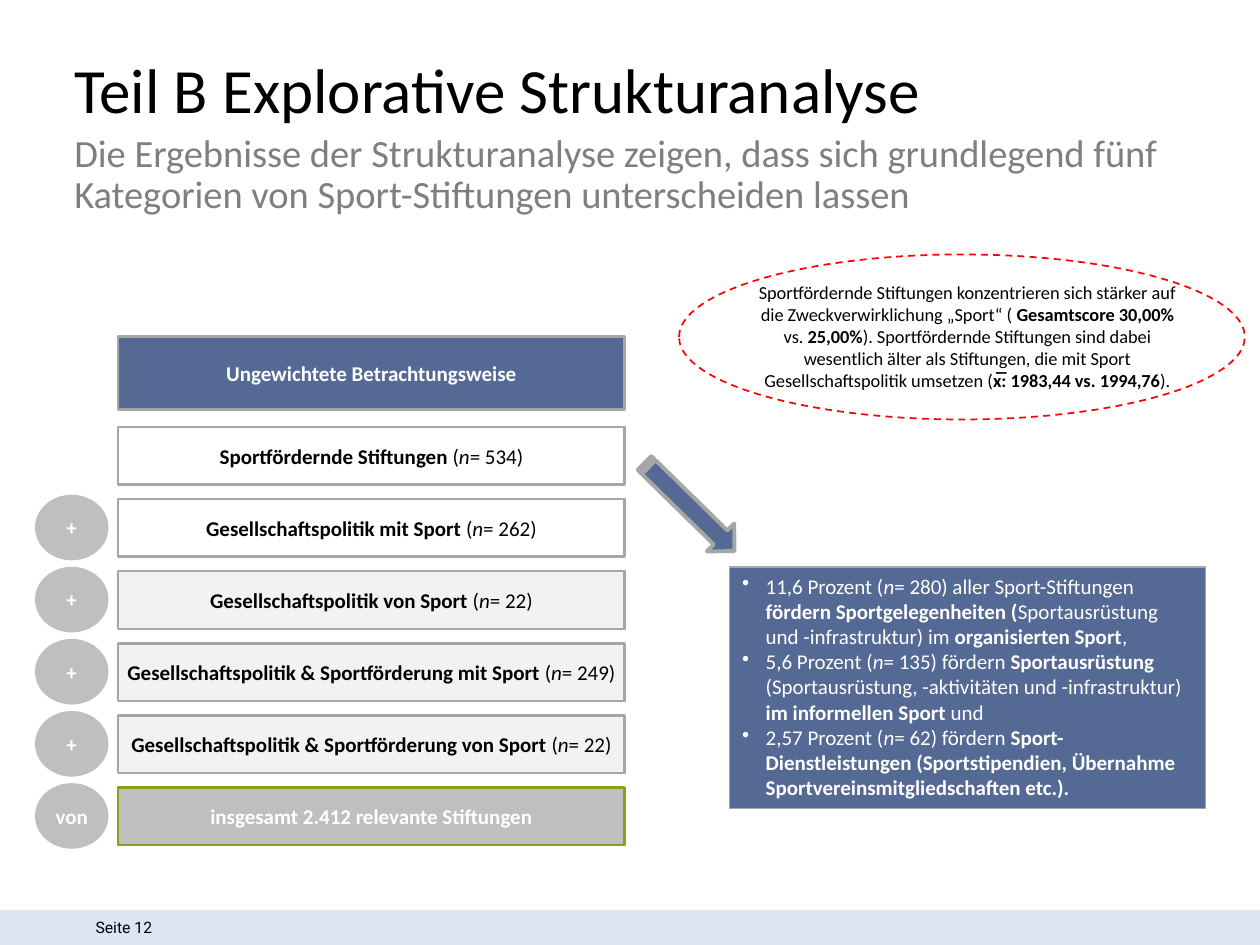
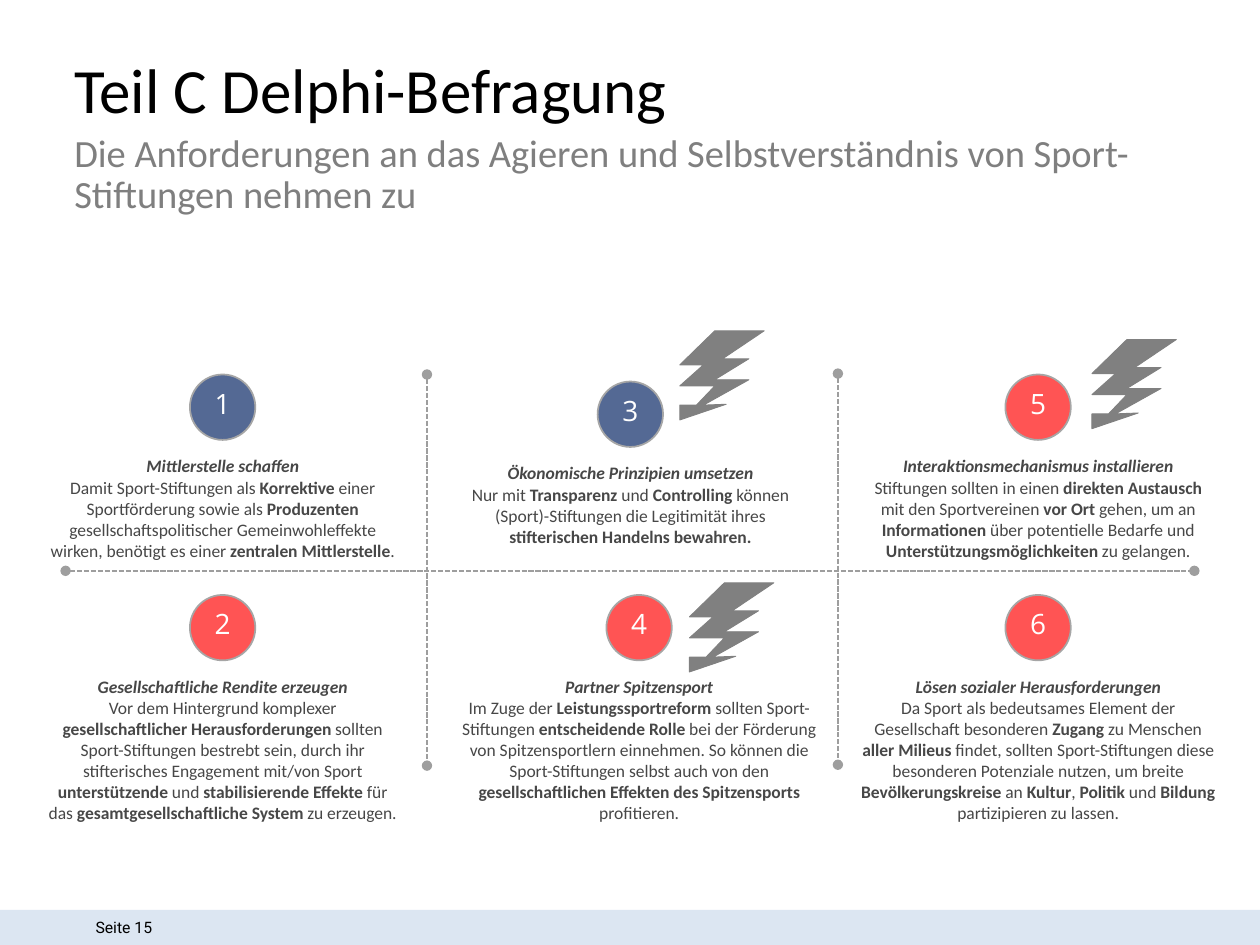
import lxml.etree
import pptx
import pptx.dml.color
import pptx.enum.dml
import pptx.enum.shapes
import pptx.enum.text
import pptx.oxml.ns
import pptx.util

Pt = pptx.util.Pt
qn = pptx.oxml.ns.qn
Shapes = pptx.enum.shapes.MSO_SHAPE
Align = pptx.enum.text.PP_ALIGN
Anchor = pptx.enum.text.MSO_ANCHOR
Dash = pptx.enum.dml.MSO_LINE

NAVY, RED, WHITE, BLACK = "002060", "FF0000", "FFFFFF", "000000"
BORDER, SILVER, PALE, GREEN = "A6A6A6", "BFBFBF", "F2F2F2", "86A315"
SUBTITLE, BODY, DIVIDER, BOLT, BAND = "7F7F7F", "474747", "9E9E9E", "808080", "DCE6F2"
OPACITY = 67
BADGE = 37.4
BOLT_OUTLINE = [(20, 0), (0, 19.5), (13.5, 19.5), (0, 31.5), (20, 31.5), (9.5, 42.5),
                (0, 42.5), (0, 51), (26.5, 42), (13.5, 42.5), (39.5, 28), (20, 28),
                (39.5, 16), (24.5, 16), (48.25, 0)]

ROWS = [
    ("", "*Sportfördernde Stiftungen *(_n_= 534)", None, BORDER, BLACK),
    ("+", "*Gesellschaftspolitik mit Sport *(_n_= 262)", None, BORDER, BLACK),
    ("+", "*Gesellschaftspolitik von Sport *(_n_= 22)", PALE, BORDER, BLACK),
    ("+", "*Gesellschaftspolitik & Sportförderung mit Sport *(_n_= 249)", PALE, BORDER, BLACK),
    ("+", "*Gesellschaftspolitik & Sportförderung von Sport *(_n_= 22)", PALE, BORDER, BLACK),
    ("von", "*insgesamt 2.412 relevante Stiftungen*", SILVER, GREEN, WHITE),
]

CALLOUT = ("Sportfördernde Stiftungen konzentrieren sich stärker auf die Zweckverwirklichung "
           "„Sport“ ( *Gesamtscore 30,00% *vs. *25,00%*). Sportfördernde Stiftungen sind dabei "
           "wesentlich älter als Stiftungen, die mit Sport Gesellschaftspolitik umsetzen "
           "(*x̅: 1983,44 vs. 1994,76*).")

FINDINGS = [
    "11,6 Prozent (_n_= 280) aller Sport-Stiftungen *fördern Sportgelegenheiten (*"
    "Sportausrüstung und -infrastruktur) im *organisierten Sport*,",
    "5,6 Prozent (_n_= 135) fördern *Sportausrüstung *(Sportausrüstung, -aktivitäten und "
    "-infrastruktur) *im informellen Sport *und",
    "2,57 Prozent (_n_= 62) fördern *Sport-Dienstleistungen (Sportstipendien, Übernahme "
    "Sportvereinsmitgliedschaften etc.).*",
]

DEMANDS = [
    (26, 214, "1", NAVY, None, "Mittlerstelle schaffen",
     "Damit Sport-Stiftungen als *Korrektive* einer Sportförderung sowie als *Produzenten *"
     "gesellschaftspolitischer Gemeinwohleffekte wirken, benötigt es einer "
     "*zentralen Mittlerstelle*."),
    (26, 340, "2", RED, None, "Gesellschaftliche Rendite erzeugen",
     "Vor dem Hintergrund komplexer *gesellschaftlicher Herausforderungen *sollten "
     "Sport-Stiftungen bestrebt sein, durch ihr stifterisches Engagement mit/von Sport "
     "*unterstützende* und *stabilisierende Effekte *für das "
     "*gesamtgesellschaftliche System *zu erzeugen."),
    (259, 218, "3", NAVY, (47, -29), "Ökonomische Prinzipien umsetzen",
     "Nur mit *Transparenz *und *Controlling* können (Sport)-Stiftungen die Legitimität ihres "
     "*stifterischen Handelns bewahren.*"),
    (264, 340, "4", RED, (47.5, -7), "Partner Spitzensport",
     "Im Zuge der *Leistungssportreform* sollten Sport-Stiftungen *entscheidende Rolle *bei der "
     "Förderung von Spitzensportlern einnehmen. So können die Sport-Stiftungen selbst auch von "
     "den *gesellschaftlichen Effekten des Spitzensports *profitieren."),
    (492, 214, "5", RED, (49.5, -20), "Interaktionsmechanismus installieren",
     "Stiftungen sollten in einen *direkten Austausch *mit den Sportvereinen *vor Ort *gehen, "
     "um an *Informationen* über potentielle Bedarfe und *Unterstützungsmöglichkeiten* "
     "zu gelangen."),
    (492, 340, "6", RED, None, "Lösen sozialer Herausforderungen",
     "Da Sport als bedeutsames Element der Gesellschaft besonderen *Zugang* zu Menschen "
     "*aller Milieus *findet, sollten Sport-Stiftungen diese besonderen Potenziale nutzen, um "
     "breite *Bevölkerungskreise* an *Kultur*, *Politik* und *Bildung* partizipieren zu lassen."),
]

DIVIDERS = [(244, 214, 244, 437.5), (478.8, 213.5, 478.8, 437), (37.5, 326.2, 682.5, 326.2)]


def colour(code):
    return pptx.dml.color.RGBColor.from_string(code)


def add_spans(para, text, size, font, ink):
    for bold_part, chunk in enumerate(text.split("*")):
        for italic_part, piece in enumerate(chunk.split("_")):
            if piece:
                span = para.add_run()
                span.text = piece
                span.font.name = font
                span.font.size = Pt(size)
                span.font.bold = bold_part % 2 == 1
                span.font.italic = italic_part % 2 == 1
                span.font.color.rgb = colour(ink)


def write(shape, *texts, size=12, font="Calibri", ink=BLACK, align=Align.LEFT,
          anchor=Anchor.TOP, margins=(0, 0), wrap=True, spacing=None, before=0, after=0,
          bullet=None):
    frame = shape.text_frame
    frame.auto_size = pptx.enum.text.MSO_AUTO_SIZE.NONE
    frame.word_wrap = wrap
    frame.vertical_anchor = anchor
    frame.margin_left = frame.margin_right = Pt(margins[0])
    frame.margin_top = frame.margin_bottom = Pt(margins[1])
    for index, text in enumerate(texts):
        para = frame.add_paragraph() if index else frame.paragraphs[0]
        para.alignment = align
        para.space_before = Pt(before if index else 0)
        para.space_after = Pt(after)
        if spacing:
            para.line_spacing = spacing
        if bullet:
            properties = para._p.get_or_add_pPr()
            properties.set("marL", str(Pt(13.5)))
            properties.set("indent", str(-Pt(13.5)))
            lxml.etree.SubElement(properties, qn("a:buChar")).set("char", bullet)
        add_spans(para, text, size, font, ink)


def paint(shape, fill=None, line=None, weight=1, dash=None, opacity=None):
    shape.shadow.inherit = False
    if fill:
        shape.fill.solid()
        shape.fill.fore_color.rgb = colour(fill)
    else:
        shape.fill.background()
    if opacity:
        solid = shape.element.spPr.find(qn("a:solidFill"))
        lxml.etree.SubElement(solid[0], qn("a:alpha")).set("val", str(opacity * 1000))
    if line:
        shape.line.color.rgb = colour(line)
        shape.line.width = Pt(weight)
        if dash:
            shape.line.dash_style = dash
    else:
        shape.line.fill.background()


def add_box(page, kind, left, top, width, height, **look):
    shape = page.shapes.add_shape(kind, Pt(left), Pt(top), Pt(width), Pt(height))
    paint(shape, **look)
    return shape


def add_text(page, left, top, width, height, *texts, **style):
    box = page.shapes.add_textbox(Pt(left), Pt(top), Pt(width), Pt(height))
    write(box, *texts, **style)


def add_divider(page, x1, y1, x2, y2):
    divider = page.shapes.add_connector(pptx.enum.shapes.MSO_CONNECTOR.STRAIGHT,
                                        Pt(x1), Pt(y1), Pt(x2), Pt(y2))
    divider.line.color.rgb = colour(DIVIDER)
    divider.line.width = Pt(1)
    divider.line.dash_style = Dash.SQUARE_DOT
    properties = divider.element.spPr
    outline = properties.find(qn("a:ln"))
    for end in ("a:headEnd", "a:tailEnd"):
        lxml.etree.SubElement(outline, qn(end)).set("type", "oval")
    lxml.etree.SubElement(properties, qn("a:effectLst"))


def add_bolt(page, left, top):
    corners = [(Pt(x), Pt(y)) for x, y in BOLT_OUTLINE]
    builder = page.shapes.build_freeform(*corners[0])
    builder.add_line_segments(corners[1:], close=True)
    paint(builder.convert_to_shape(Pt(left), Pt(top)), fill=BOLT, line=BOLT, weight=0.5)


def add_page(deck, title, subtitle, number):
    page = deck.slides.add_slide(deck.slide_layouts[5])
    add_box(page, Shapes.RECTANGLE, 0, 520, 720, 20, fill=BAND)
    add_text(page, 47.5, 521.3, 147.6, 17.3, f"Seite {number}", size=9, font="Roboto",
             anchor=Anchor.MIDDLE, margins=(7.2, 3.6))
    heading = page.shapes.title
    heading.left, heading.top, heading.width, heading.height = Pt(42.5), Pt(34), Pt(629), Pt(42)
    write(heading, title, size=36, spacing=0.9)
    add_text(page, 42.5, 76.5, 629, 42.5, subtitle, size=22, ink=SUBTITLE, spacing=0.9, after=10)
    return page


def add_categories(page, left, top):
    centred = dict(align=Align.CENTER, anchor=Anchor.MIDDLE)
    bar_left, bar_width, bar_height, pitch = left + 47.5, 289.5, 33, 41.2
    header = add_box(page, Shapes.RECTANGLE, bar_left, top, bar_width, 42,
                     fill=NAVY, opacity=OPACITY, line=BORDER, weight=1.5)
    write(header, "*Ungewichtete Betrachtungsweise*", ink=WHITE, **centred)
    for index, (sign, label, fill, line, ink) in enumerate(ROWS):
        bar_top = top + 51.8 + index * pitch
        bar = add_box(page, Shapes.RECTANGLE, bar_left, bar_top, bar_width, bar_height,
                      fill=fill, line=line, weight=1.5)
        write(bar, label, ink=ink, **centred)
        if sign:
            circle = add_box(page, Shapes.OVAL, left, bar_top - 2.5, 42, 37.5, fill=SILVER)
            write(circle, f"*{sign}*", ink=WHITE, wrap=False, **centred)


def add_callout(page, left, top, width, height):
    add_box(page, Shapes.OVAL, left, top, width, height,
            fill=WHITE, line=RED, weight=1, dash=Dash.DASH)
    add_text(page, left + 34.5, top + 11.5, 260.6, 70.6, CALLOUT, size=10.5,
             align=Align.CENTER, margins=(7.2, 3.6))


def add_findings(page, left, top, width, height):
    arrow = add_box(page, Shapes.STRIPED_RIGHT_ARROW, left - 59, top - 45.4, 72, 22.3,
                    fill=NAVY, opacity=OPACITY, line=BORDER, weight=2.25)
    arrow.rotation = 44.4
    panel = add_box(page, Shapes.RECTANGLE, left, top, width, height,
                    fill=NAVY, opacity=OPACITY, line=BORDER, weight=0.75)
    write(panel, *FINDINGS, ink=WHITE, margins=(7.2, 3.6), bullet="•")


def add_demand(page, left, top, number, fill, bolt, heading, text):
    badge_left = left + 82.5
    badge = add_box(page, Shapes.OVAL, badge_left, top, BADGE, BADGE,
                    fill=fill, opacity=OPACITY, line=BORDER, weight=1)
    write(badge, number, size=16, font="Open Sans", ink=WHITE, align=Align.CENTER,
          anchor=Anchor.MIDDLE, wrap=False, spacing=0.7)
    add_text(page, left, top + 46, 202.5, 85, f"*_{heading}_*", text, size=10, ink=BODY,
             align=Align.CENTER, before=0.4)
    if bolt:
        add_bolt(page, badge_left + bolt[0], top + bolt[1])


def main():
    deck = pptx.Presentation()
    deck.slide_width, deck.slide_height = Pt(720), Pt(540)

    structure = add_page(deck, "Teil B Explorative Strukturanalyse",
                         "Die Ergebnisse der Strukturanalyse zeigen, dass sich grundlegend fünf "
                         "Kategorien von Sport-Stiftungen unterscheiden lassen", 12)
    add_categories(structure, 20, 192.2)
    add_callout(structure, 388, 145.4, 323.3, 94.3)
    add_findings(structure, 417, 324, 272, 138.2)

    survey = add_page(deck, "Teil C Delphi-Befragung",
                      "Die Anforderungen an das Agieren und Selbstverständnis von "
                      "Sport-Stiftungen nehmen zu", 15)
    for demand in DEMANDS:
        add_demand(survey, *demand)
    for divider in DIVIDERS:
        add_divider(survey, *divider)

    deck.save("out.pptx")


if __name__ == "__main__":
    main()
